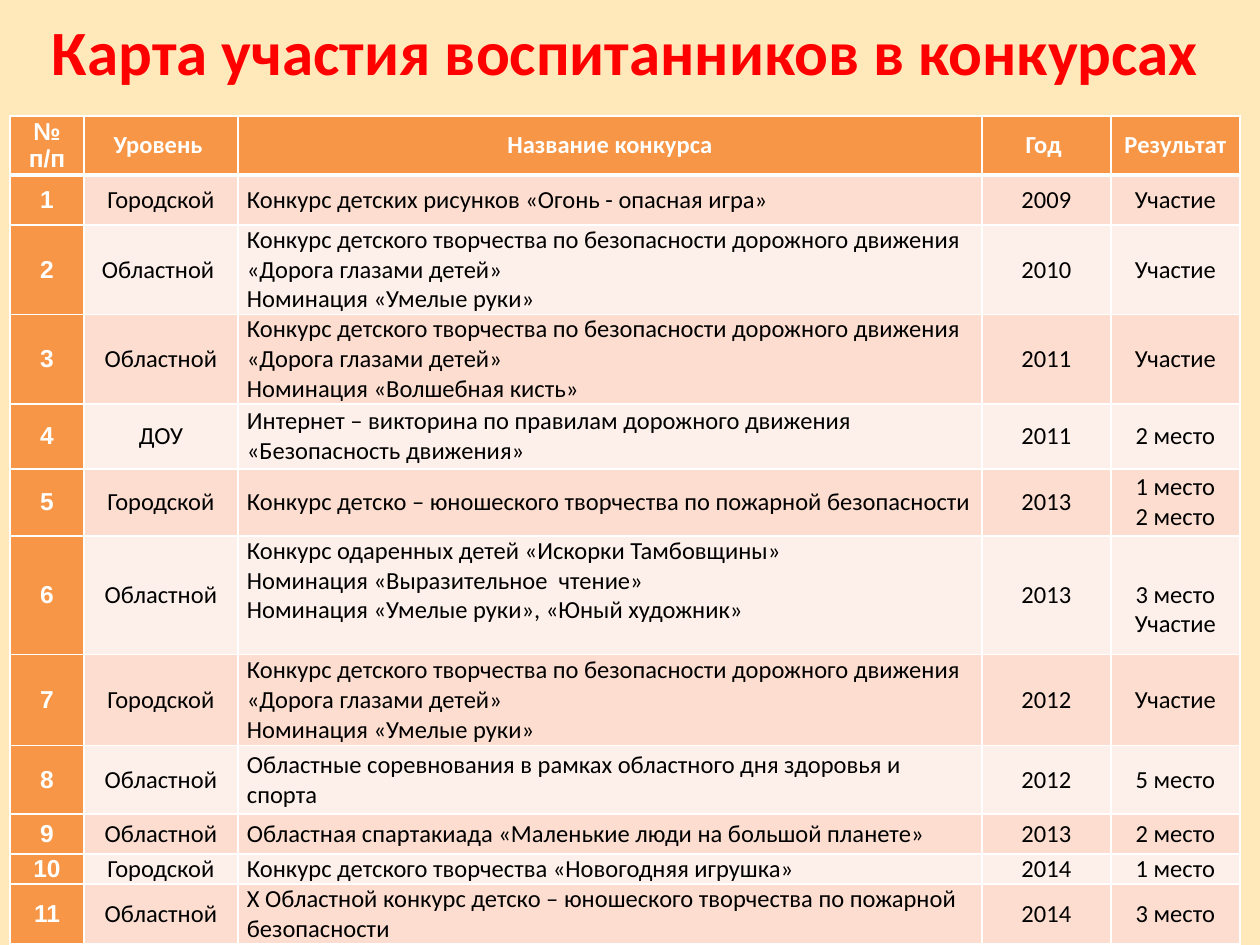
from pptx import Presentation
from pptx.dml.color import RGBColor
from pptx.enum.text import MSO_ANCHOR as Anchor, PP_ALIGN as Align
from pptx.oxml import parse_xml
from pptx.oxml.ns import nsdecls
from pptx.util import Pt

PX = 914400 // 126
TITLE = "Карта участия воспитанников в конкурсах"
ROAD_SAFETY = "Конкурс детского творчества по безопасности дорожного движения «Дорога глазами детей»"
HEADER = ("№\nп/п", "Уровень ", "Название конкурса", "Год ", "Результат")
CONTESTS = [
    ("Городской", "Конкурс детских рисунков «Огонь - опасная игра»", "2009", "Участие"),
    ("Областной ", ROAD_SAFETY + "\nНоминация «Умелые руки»", "2010", "Участие"),
    ("Областной", ROAD_SAFETY + "\nНоминация «Волшебная кисть»", "2011", "Участие"),
    ("ДОУ", "Интернет – викторина по правилам дорожного движения «Безопасность движения»",
     "2011", "2 место"),
    ("Городской", "Конкурс детско – юношеского творчества по пожарной безопасности",
     "2013", "1 место\n2 место"),
    ("Областной", "Конкурс одаренных детей «Искорки Тамбовщины»\n"
     "Номинация «Выразительное  чтение»\nНоминация «Умелые руки», «Юный художник»",
     "2013", "3 место\nУчастие"),
    ("Городской", ROAD_SAFETY + "\nНоминация «Умелые руки»", "2012", "Участие"),
    ("Областной", "Областные соревнования в рамках областного дня здоровья и спорта",
     "2012", "5 место"),
    ("Областной", "Областная спартакиада «Маленькие люди на большой планете»", "2013", "2 место"),
    ("Городской", "Конкурс детского творчества «Новогодняя игрушка»", "2014", "1 место"),
    ("Областной", "X Областной конкурс детско – юношеского творчества по пожарной безопасности",
     "2014", "3 место"),
]
COLUMN_WIDTHS = (74, 154, 744, 129, 129)
ROW_HEIGHTS = (59, 50, 88, 88, 65, 67, 117, 91, 69, 40, 30, 59)
NUMBER, NAME, RESULT = 0, 2, 4
SPLIT_AWARD_ROW = 6
BACKGROUND, ACCENT, BANDS = "FFE8BA", "F79646", ("FDEFE9", "FCDDCF")
WHITE, BLACK, RED = "FFFFFF", "000000", "FF0000"


def paint(fill, color):
    """Fill an area with one solid colour."""
    fill.solid()
    fill.fore_color.rgb = RGBColor.from_string(color)


def style(paragraph, size, font_name, color, bold, align):
    """Format a paragraph and its runs."""
    paragraph.alignment = align
    for run in paragraph.runs:
        run.font.size, run.font.name, run.font.bold = Pt(size), font_name, bold
        run.font.color.rgb = RGBColor.from_string(color)


def add_borders(cell, row):
    """Draw white cell borders, with a thick line under the header."""
    widths = {"L": 1, "R": 1, "T": 3 if row == 1 else 1, "B": 3 if row == 0 else 1}
    properties = cell._tc.get_or_add_tcPr()
    for position, (side, width) in enumerate(widths.items()):
        properties.insert(position, parse_xml(
            f'<a:ln{side} {nsdecls("a")} w="{Pt(width)}"><a:solidFill>'
            f'<a:srgbClr val="{WHITE}"/></a:solidFill></a:ln{side}>'))


def fill_cell(cell, text, row, column):
    """Write and format one cell according to its place in the table."""
    accented = row == 0 or column == NUMBER
    paint(cell.fill, ACCENT if accented else BANDS[row % 2])
    add_borders(cell, row)
    cell.vertical_anchor = Anchor.MIDDLE
    cell.margin_left = cell.margin_right = 9 * PX
    cell.margin_top = cell.margin_bottom = 0
    if row == SPLIT_AWARD_ROW and column == NAME:
        cell.margin_bottom = 29 * PX
    if row == SPLIT_AWARD_ROW and column == RESULT:
        cell.margin_top = 29 * PX
    cell.text_frame.text = text
    for paragraph in cell.text_frame.paragraphs:
        style(paragraph, 14, "Arial" if column == NUMBER else "Calibri",
              WHITE if accented else BLACK, accented,
              Align.LEFT if column == NAME and row else Align.CENTER)


def main():
    """Build the slide with the contest table."""
    deck = Presentation()
    deck.slide_width, deck.slide_height = 1260 * PX, 945 * PX
    slide = deck.slides.add_slide(deck.slide_layouts[6])
    paint(slide.background.fill, BACKGROUND)

    rows = [HEADER] + [(str(n), *contest) for n, contest in enumerate(CONTESTS, 1)]
    table = slide.shapes.add_table(
        len(rows), len(HEADER), 10 * PX, 116 * PX,
        sum(COLUMN_WIDTHS) * PX, sum(ROW_HEIGHTS) * PX).table
    for column, width in zip(table.columns, COLUMN_WIDTHS):
        column.width = width * PX
    for row, height in zip(table.rows, ROW_HEIGHTS):
        row.height = height * PX
    for r, texts in enumerate(rows):
        for c, text in enumerate(texts):
            fill_cell(table.cell(r, c), text, r, c)

    title = slide.shapes.add_textbox(25 * PX, 6 * PX, 1201 * PX, 89 * PX).text_frame
    title.word_wrap = True
    title.text = TITLE
    style(title.paragraphs[0], 36, "Calibri", RED, True, Align.CENTER)
    deck.save("out.pptx")


if __name__ == "__main__":
    main()
